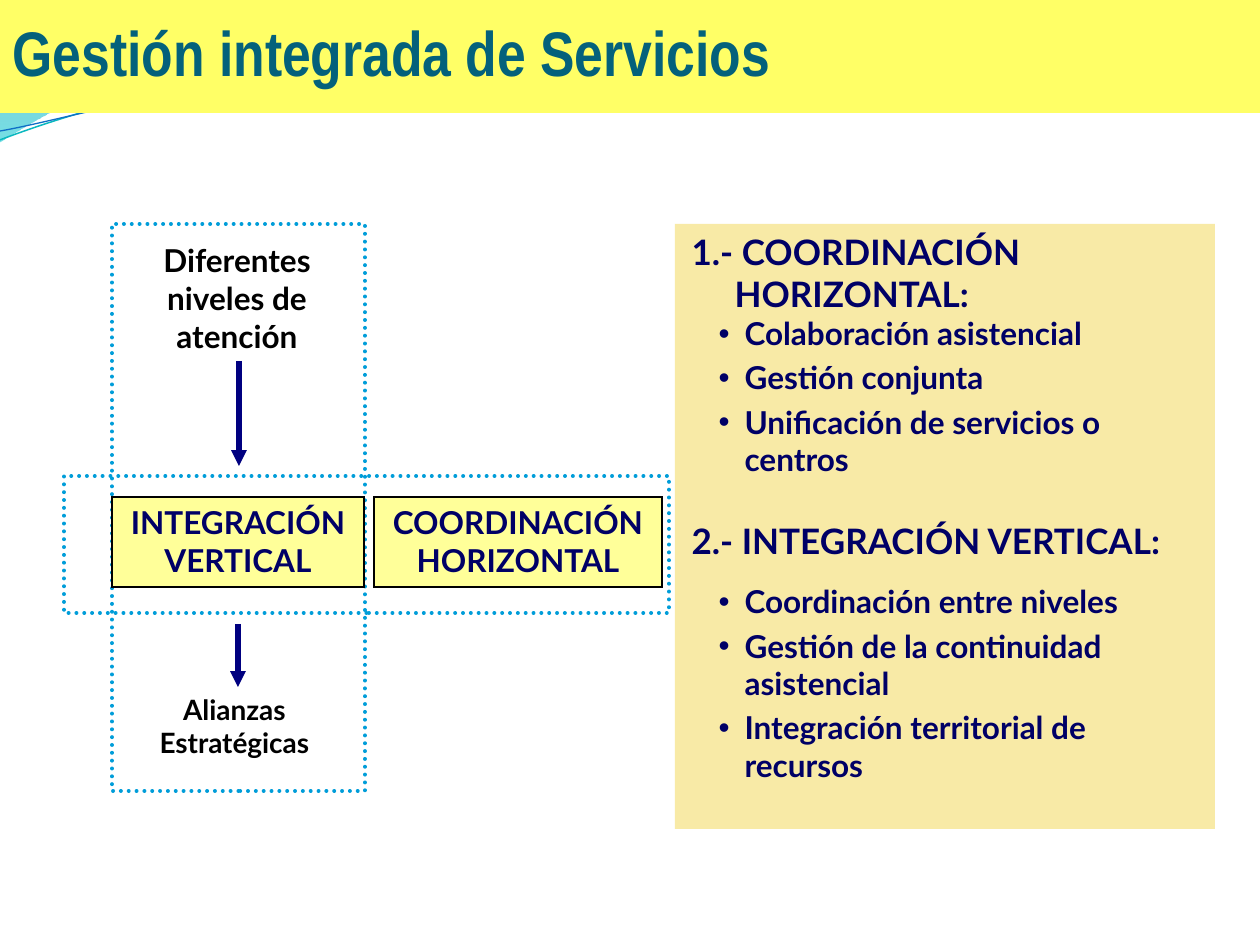
import math

import pptx
import pptx.util
import pptx.dml.color
import pptx.enum.dml
import pptx.enum.shapes
import pptx.enum.text
import pptx.oxml
import pptx.oxml.ns

PX = 914400 / 126  # EMU per px
ALIGN = pptx.enum.text.PP_ALIGN
ANCHOR = pptx.enum.text.MSO_ANCHOR
AUTO_SIZE = pptx.enum.text.MSO_AUTO_SIZE

COLORS = {
    "title_band": "FFFF66", "title_text": "04617B", "panel": "F8EAA6",
    "navy": "000066", "arrow": "000080", "box": "FFFF99", "black": "000000",
    "dotted": "009DD9", "wave_top": "0074A1", "wave_bottom": "00C6CF",
    "crest_top": "00A1A9", "crest_bottom": "008BBF",
    "teal_line": "0AB8BF", "blue_line": "0F6FC6",
}

# Content
TITLE = "Gestión integrada de Servicios"
HEADING = {"size": 20}
BULLET = {"size": 18, "level": 1, "margin": 53, "indent": -26, "after": 3.6, "bullet": True}
LIST = [
    ("1.- COORDINACIÓN", HEADING),
    ("HORIZONTAL:", {**HEADING, "margin": 43}),
    ("Colaboración asistencial", BULLET),
    ("Gestión conjunta", BULLET),
    ("Unificación de servicios o centros", BULLET),
    ("2.- INTEGRACIÓN VERTICAL:", {**HEADING, "before": 20, "after": 12}),
    ("Coordinación entre niveles", BULLET),
    ("Gestión de la continuidad asistencial", BULLET),
    ("Integración territorial de recursos", BULLET),
]
FRAMES = [(112, 224, 253, 567), (64, 476, 605, 137)]
BOXES = [
    (("INTEGRACIÓN", "VERTICAL"), (112, 497, 252, 90)),
    (("COORDINACIÓN", "HORIZONTAL"), (374, 497, 288, 90)),
]
LABELS = [
    ("Diferentes niveles de atención", (143, 235, 188, 127), 18),
    ("Alianzas Estratégicas", (133, 686, 203, 81), 16),
]
ARROWS = [(239, 361, 466), (238, 624, 687)]

# Curves in px: start point, then cubic segments (6 numbers) or straight ones (2)
WAVES = [  # gradient stops (position, color, opacity), start, segments
    ([(0, "wave_top", 45), (1, "wave_bottom", 55)], (0, 0), [
        (554, -1), (600, 21, 837, 79, 955, 79), (1075, 79, 1207, 33, 1260, 11),
        (1261, 45), (1239, 55, 1096, 96, 940, 95), (784, 95, 481, 35, 324, 43),
        (163, 45, 58, 105, -1, 142), (0, 0)]),
    ([(0, "crest_top", 30), (0.8, "crest_bottom", 45)], (604, -1), [
        (641, 14, 859, 78, 969, 82), (1079, 87, 1211, 40, 1260, 26),
        (1260, 0), (604, -1)]),
]
WAVE_TILT = 357.3
WAVE_LINES = [  # color, width, centre of rotation, start, segments
    ("teal_line", 0.85, (629, 73), (0, 140), [
        (60, 117, 199, 72, 349, 66), (498, 59, 747, 112, 898, 101),
        (1050, 89, 1182, 19, 1257, -3)]),
    ("blue_line", 0.75, (629, 74), (0, 131), [
        (59, 121, 207, 77, 357, 71), (508, 64, 752, 106, 903, 95),
        (1053, 84, 1186, 26, 1260, 8)]),
]


def emu(pixels):
    return pptx.util.Emu(round(pixels * PX))


def rgb(name):
    return pptx.dml.color.RGBColor.from_string(COLORS[name])


def drawing(tag, attributes=""):
    return pptx.oxml.parse_xml(f"<a:{tag} {pptx.oxml.ns.nsdecls('a')} {attributes}/>")


def place(shape, left, top, width, height):
    shape.left, shape.top, shape.width, shape.height = map(emu, (left, top, width, height))


def style(shape, fill=None, line=None, width=0.75, dash=None):
    shape.shadow.inherit = False
    if fill:
        shape.fill.solid()
        shape.fill.fore_color.rgb = rgb(fill)
    else:
        shape.fill.background()
    if line:
        shape.line.color.rgb = rgb(line)
        shape.line.width = pptx.util.Pt(width)
        shape.line.dash_style = dash
        outline = shape.line._get_or_add_ln()
        outline.append(drawing("miter", 'lim="800000"'))
        if dash:
            outline.set("cap", "rnd")
    else:
        shape.line.fill.background()


def add_rectangle(slide, bounds, **look):
    shape = slide.shapes.add_shape(pptx.enum.shapes.MSO_SHAPE.RECTANGLE, *map(emu, bounds))
    style(shape, **look)
    return shape


def write(frame, text, first=False, size=18, color="navy", font="Lato", align=ALIGN.LEFT,
          level=0, margin=0, indent=0, before=0, after=0, spacing=1.0, bullet=False):
    paragraph = frame.paragraphs[0] if first else frame.add_paragraph()
    paragraph.alignment, paragraph.level = align, level
    paragraph.line_spacing = spacing
    paragraph.space_before = pptx.util.Pt(before)
    paragraph.space_after = pptx.util.Pt(after)
    run = paragraph.add_run()
    run.text = text
    run.font.name, run.font.size, run.font.bold = font, pptx.util.Pt(size), True
    run.font.color.rgb = rgb(color)
    properties = paragraph._p.get_or_add_pPr()
    properties.set("marL", str(emu(margin)))
    properties.set("indent", str(emu(indent)))
    properties.append(drawing("buChar", 'char="•"') if bullet else drawing("buNone"))


def add_label(slide, text, bounds, size):
    label = slide.shapes.add_textbox(*map(emu, bounds))
    label.text_frame.word_wrap = True
    write(label.text_frame, text, first=True, size=size, color="black", align=ALIGN.CENTER)


def add_arrow(slide, x, top, bottom):
    arrow = slide.shapes.add_connector(
        pptx.enum.shapes.MSO_CONNECTOR.STRAIGHT, emu(x), emu(top), emu(x), emu(bottom))
    arrow.line.color.rgb = rgb("arrow")
    arrow.line.width = pptx.util.Pt(3)
    arrow.line._get_or_add_ln().append(drawing("tailEnd", 'type="triangle"'))
    arrow._element.spPr.append(drawing("effectLst"))


def rotate(point, centre, degrees):
    cosine, sine = math.cos(math.radians(degrees)), math.sin(math.radians(degrees))
    x, y = point[0] - centre[0], point[1] - centre[1]
    return centre[0] + x * cosine - y * sine, centre[1] + x * sine + y * cosine


def add_curve(slide, start, segments, centre=(0, 0), tilt=0, close=False, **look):
    points = [start] + [s[i:i + 2] for s in segments for i in range(0, len(s), 2)]
    points = [tuple(map(emu, rotate(point, centre, -tilt))) for point in points]
    builder = slide.shapes.build_freeform(*points[0])
    builder.add_line_segments(points[1:], close=close)
    shape = builder.convert_to_shape()
    shape.rotation = tilt
    # Three line steps of a cubic segment become one Bézier step
    steps = iter(list(shape._element.spPr.iter(pptx.oxml.ns.qn("a:lnTo"))))
    for segment in segments:
        first = next(steps)
        if len(segment) == 6:
            cubic = drawing("cubicBezTo")
            first.addprevious(cubic)
            for step in (first, next(steps), next(steps)):
                cubic.append(step[0])
                step.getparent().remove(step)
    style(shape, **look)
    return shape


def fill_gradient(shape, stops):
    shape.fill.gradient()
    shape.fill.gradient_angle = 270
    for stop, (position, color, opacity) in zip(shape.fill.gradient_stops, stops):
        stop.position = position
        stop.color.rgb = rgb(color)
    colors = shape._element.spPr.iter(pptx.oxml.ns.qn("a:srgbClr"))
    for element, (position, color, opacity) in zip(list(colors), stops):
        element.append(drawing("alpha", f'val="{opacity * 1000}"'))


def bring_to_front(shape):
    shape.element.getparent().append(shape.element)


def main():
    presentation = pptx.Presentation()
    presentation.slide_width, presentation.slide_height = emu(1260), emu(945)
    slide = presentation.slides.add_slide(presentation.slide_layouts[1])
    title, body = slide.placeholders

    # Waves behind the title band
    for stops, start, segments in WAVES:
        fill_gradient(add_curve(slide, start, segments, close=True), stops)
    for color, width, centre, start, segments in WAVE_LINES:
        add_curve(slide, start, segments, centre, WAVE_TILT, line=color, width=width)

    # Panel with the numbered list
    add_rectangle(slide, (675, 224, 540, 605), fill="panel")
    place(body, 679, 224, 523, 590)
    bring_to_front(body)
    body.text_frame.auto_size = AUTO_SIZE.NONE
    for index, (text, look) in enumerate(LIST):
        write(body.text_frame, text, first=index == 0, **look)

    # Diagram: dotted frames, labels, arrows and boxes
    for bounds in FRAMES:
        add_rectangle(slide, bounds, line="dotted", width=2.25,
                      dash=pptx.enum.dml.MSO_LINE.ROUND_DOT)
    for label in LABELS:
        add_label(slide, *label)
    for arrow in ARROWS:
        add_arrow(slide, *arrow)
    for lines, bounds in BOXES:
        box = add_rectangle(slide, bounds, fill="box", line="black")
        box.text_frame.word_wrap = False
        box.text_frame.vertical_anchor = ANCHOR.TOP
        for index, text in enumerate(lines):
            write(box.text_frame, text, first=index == 0, align=ALIGN.CENTER)

    # Title band
    place(title, 0, 0, 1260, 113)
    title.fill.solid()
    title.fill.fore_color.rgb = rgb("title_band")
    title.text_frame.vertical_anchor = ANCHOR.MIDDLE
    title.text_frame.auto_size = AUTO_SIZE.NONE
    write(title.text_frame, TITLE, first=True, size=36, color="title_text",
          font="Arial Narrow", spacing=0.9)
    bring_to_front(title)

    presentation.save("out.pptx")


if __name__ == "__main__":
    main()
